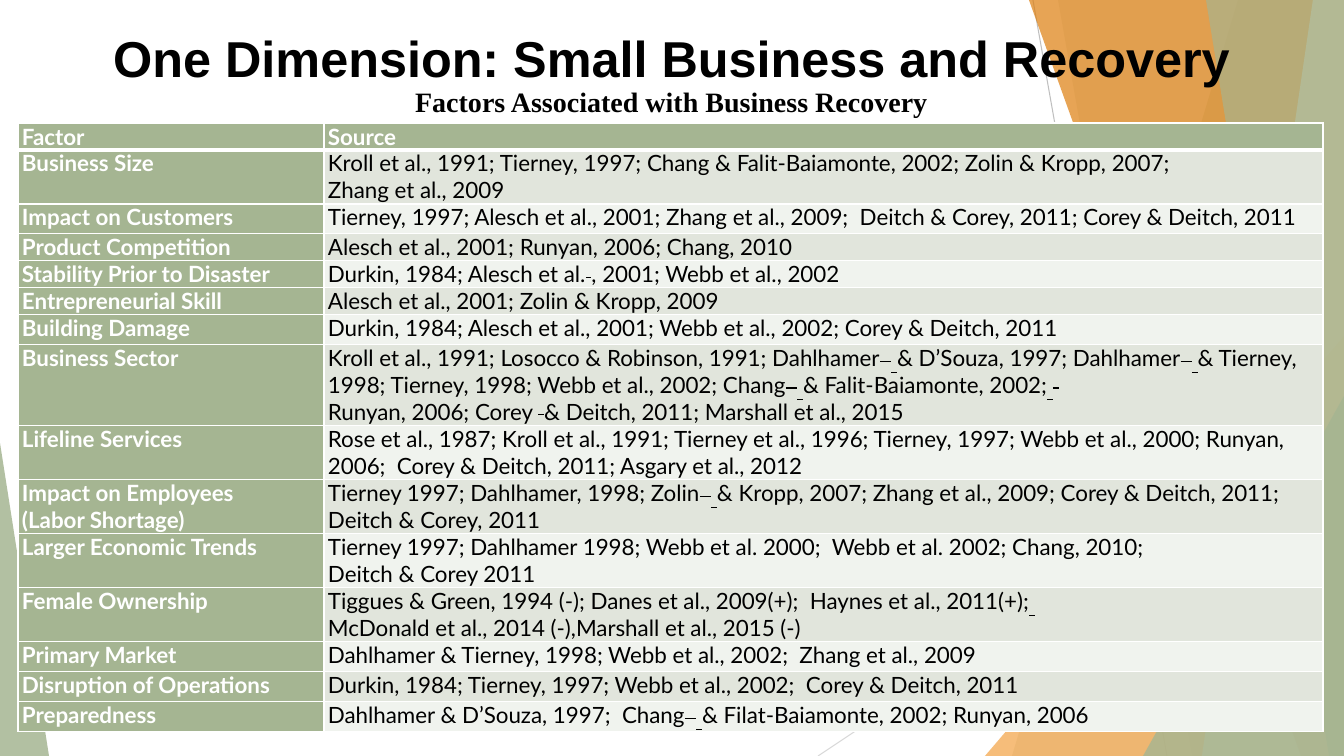
from itertools import groupby

from lxml import etree
from pptx import Presentation
from pptx import util as u
from pptx.dml.color import RGBColor
from pptx.enum import shapes, text
from pptx.oxml.ns import qn

WHITE = RGBColor(0xFF, 0xFF, 0xFF)
BLACK = RGBColor(0, 0, 0)
SAGE = RGBColor(0xA5, 0xB5, 0x92)
MIST = RGBColor(0xC9, 0xD3, 0xBE)
AMBER = RGBColor(0xF3, 0xA4, 0x47)
RUST = RGBColor(0xDD, 0x7E, 0x0E)
BAND_ODD = RGBColor(0xE1, 0xE5, 0xDC)
BAND_EVEN = RGBColor(0xF0, 0xF3, 0xEE)
GREY = RGBColor(0xBF, 0xBF, 0xBF)
PALE = RGBColor(0xD9, 0xD9, 0xD9)

W, H = 1344, 756
PX = 914400 / 100.8

# Headings: wording, box, font, size, line spacing, wrap
HEADS = [
    ("One Dimension: Small Business and Recovery", (0, 13, W, 97), "Arial", 36, 0.9, True),
    ("Factors Associated with Business Recovery", (397, 80, 549, 44),
     "Times New Roman", 20, 1.0, False),
]

# Table rows: height, factor, source; ~ is a struck space, _ an underlined one
ROWS = [
    (27, "Factor", "Source"),
    (54, "Business Size", "Kroll et al., 1991; Tierney, 1997; Chang & Falit-Baiamonte, 2002; "
     "Zolin & Kropp, 2007;\nZhang et al., 2009"),
    (30, "Impact on Customers", "Tierney, 1997; Alesch et al., 2001; Zhang et al., 2009;  "
     "Deitch & Corey, 2011; Corey & Deitch, 2011"),
    (27, "Product Competition", "Alesch et al., 2001; Runyan, 2006; Chang, 2010"),
    (27, "Stability Prior to Disaster", "Durkin, 1984; Alesch et al.~,_2001; Webb et al., 2002"),
    (27, "Entrepreneurial Skill", "Alesch et al., 2001; Zolin & Kropp, 2009"),
    (30, "Building Damage", "Durkin, 1984; Alesch et al., 2001; Webb et al., 2002; "
     "Corey & Deitch, 2011"),
    (81, "Business Sector", "Kroll et al., 1991; Losocco & Robinson, 1991; "
     "Dahlhamer~~_& D’Souza, 1997; Dahlhamer~~_& Tierney, 1998; Tierney, 1998; "
     "Webb et al., 2002; Chang~~_& Falit-Baiamonte, 2002;_~\n"
     "Runyan, 2006; Corey ~& Deitch, 2011; Marshall et al., 2015"),
    (54, "Lifeline Services", "Rose et al., 1987; Kroll et al., 1991; Tierney et al., 1996; "
     "Tierney, 1997; Webb et al., 2000; Runyan, 2006;  Corey & Deitch, 2011; "
     "Asgary et al., 2012"),
    (54, "Impact on Employees\n(Labor Shortage)", "Tierney 1997; Dahlhamer, 1998; "
     "Zolin~~_& Kropp, 2007; Zhang et al., 2009; Corey & Deitch, 2011; Deitch & Corey, 2011"),
    (54, "Larger Economic Trends", "Tierney 1997; Dahlhamer 1998; Webb et al. 2000;  "
     "Webb et al. 2002; Chang, 2010;\nDeitch & Corey 2011"),
    (54, "Female Ownership", "Tiggues & Green, 1994 (-); Danes et al., 2009(+);  "
     "Haynes et al., 2011(+);_\nMcDonald et al., 2014 (-),Marshall et al., 2015 (-)"),
    (30, "Primary Market", "Dahlhamer & Tierney, 1998; Webb et al., 2002;  Zhang et al., 2009"),
    (30, "Disruption of Operations", "Durkin, 1984; Tierney, 1997; Webb et al., 2002;  "
     "Corey & Deitch, 2011"),
    (30, "Preparedness", "Dahlhamer & D’Souza, 1997;  Chang~~_& Filat-Baiamonte, 2002; "
     "Runyan, 2006"),
]
LEFT, TOP = 18, 123
COLS = (306, 999)

# Backdrop: thin lines, then facets from back to front
LINES = [((1033, 0), (1167, H), GREY), ((W, 406), (818, H), PALE)]
# A facet is (top x, bottom x) reaching the right edge, or (triangle box, apex)
FACETS = [
    ("edge", (1238, 1012), SAGE, 30),
    ("edge", (1058, 1192), SAGE, 20),
    ("tri", ((985, 336, 359, 420), 1), AMBER, 72),
    ("edge", (1029, 1301), RUST, 70),
    ("edge", (1313, 1202), MIST, 70),
    ("edge", (1206, 1329), SAGE, 65),
    ("tri", ((1143, 396, 201, 360), 1), SAGE, 80),
    ("tri", ((0, 443, 49, 313), 0), SAGE, 85),
]


def px(*vals):
    return [u.Emu(round(v * PX)) for v in vals]


def draw_line(slide, start, end, color):
    line = slide.shapes.add_connector(shapes.MSO_CONNECTOR.STRAIGHT, *px(*start, *end))
    line.line.color.rgb = color
    line.line.width = u.Pt(0.75)
    etree.SubElement(line._element.spPr, qn("a:effectLst"))


def draw_facet(slide, kind, geom, color, alpha):
    if kind == "edge":
        top, foot = geom
        pen = slide.shapes.build_freeform(top, 0, scale=PX)
        pen.add_line_segments([(W, 0), (W, H), (foot, H)], close=True)
        facet = pen.convert_to_shape()
    else:
        box, apex = geom
        facet = slide.shapes.add_shape(shapes.MSO_SHAPE.ISOSCELES_TRIANGLE, *px(*box))
        facet.adjustments[0] = apex
    facet.shadow.inherit = False
    facet.line.fill.background()
    facet.fill.solid()
    facet.fill.fore_color.rgb = color
    tint = facet._element.spPr.find(qn("a:solidFill"))[0]
    etree.SubElement(tint, qn("a:alpha"), val=str(alpha * 1000))


def style(font, name, size, color, bold):
    font.name, font.size, font.bold = name, u.Pt(size), bold
    font.color.rgb = color


def draw_head(slide, words, box, name, size, gap, wrap):
    frame = slide.shapes.add_textbox(*px(*box)).text_frame
    frame.word_wrap = wrap
    frame.vertical_anchor = text.MSO_ANCHOR.MIDDLE if wrap else text.MSO_ANCHOR.TOP
    frame.text = words
    para = frame.paragraphs[0]
    para.alignment = text.PP_ALIGN.CENTER
    para.line_spacing = gap
    style(para.runs[0].font, name, size, BLACK, True)


def set_edges(cell, widths):
    props = cell._tc.get_or_add_tcPr()
    for side, width in zip("LRTB", widths):
        edge = etree.SubElement(props, qn("a:ln" + side), w=str(u.Pt(width)))
        fill = etree.SubElement(edge, qn("a:solidFill"))
        etree.SubElement(fill, qn("a:srgbClr"), val=str(WHITE))


def fill_cell(cell, words, color, bold):
    cell.margin_left = cell.margin_right = px(4)[0]
    cell.margin_top = cell.margin_bottom = 0
    frame = cell.text_frame
    for i, part in enumerate(words.split("\n")):
        para = frame.add_paragraph() if i else frame.paragraphs[0]
        for mark, chars in groupby(part, lambda c: c if c in "~_" else ""):
            run = para.add_run()
            run.text = "".join(" " if mark else c for c in chars)
            style(run.font, "Lato", 16, color, bold)
            if mark == "_":
                run.font.underline = True
            elif mark == "~":
                run._r.get_or_add_rPr().set("strike", "sngStrike")


def draw_table(slide):
    total = sum(row[0] for row in ROWS)
    box = px(LEFT, TOP, sum(COLS), total)
    table = slide.shapes.add_table(len(ROWS), len(COLS), *box).table
    for col, width in zip(table.columns, px(*COLS)):
        col.width = width
    for r, (height, *words) in enumerate(ROWS):
        table.rows[r].height = px(height)[0]
        for c, part in enumerate(words):
            cell = table.cell(r, c)
            label = r == 0 or c == 0
            set_edges(cell, (1, 1, 3 if r == 1 else 1, 3 if r == 0 else 1))
            cell.fill.solid()
            cell.fill.fore_color.rgb = SAGE if label else BAND_ODD if r % 2 else BAND_EVEN
            fill_cell(cell, part, WHITE if label else BLACK, label)


def main():
    prs = Presentation()
    prs.slide_width, prs.slide_height = px(W, H)
    slide = prs.slides.add_slide(prs.slide_layouts[6])
    for line in LINES:
        draw_line(slide, *line)
    for facet in FACETS:
        draw_facet(slide, *facet)
    for head in HEADS:
        draw_head(slide, *head)
    draw_table(slide)
    prs.save("out.pptx")


if __name__ == "__main__":
    main()
